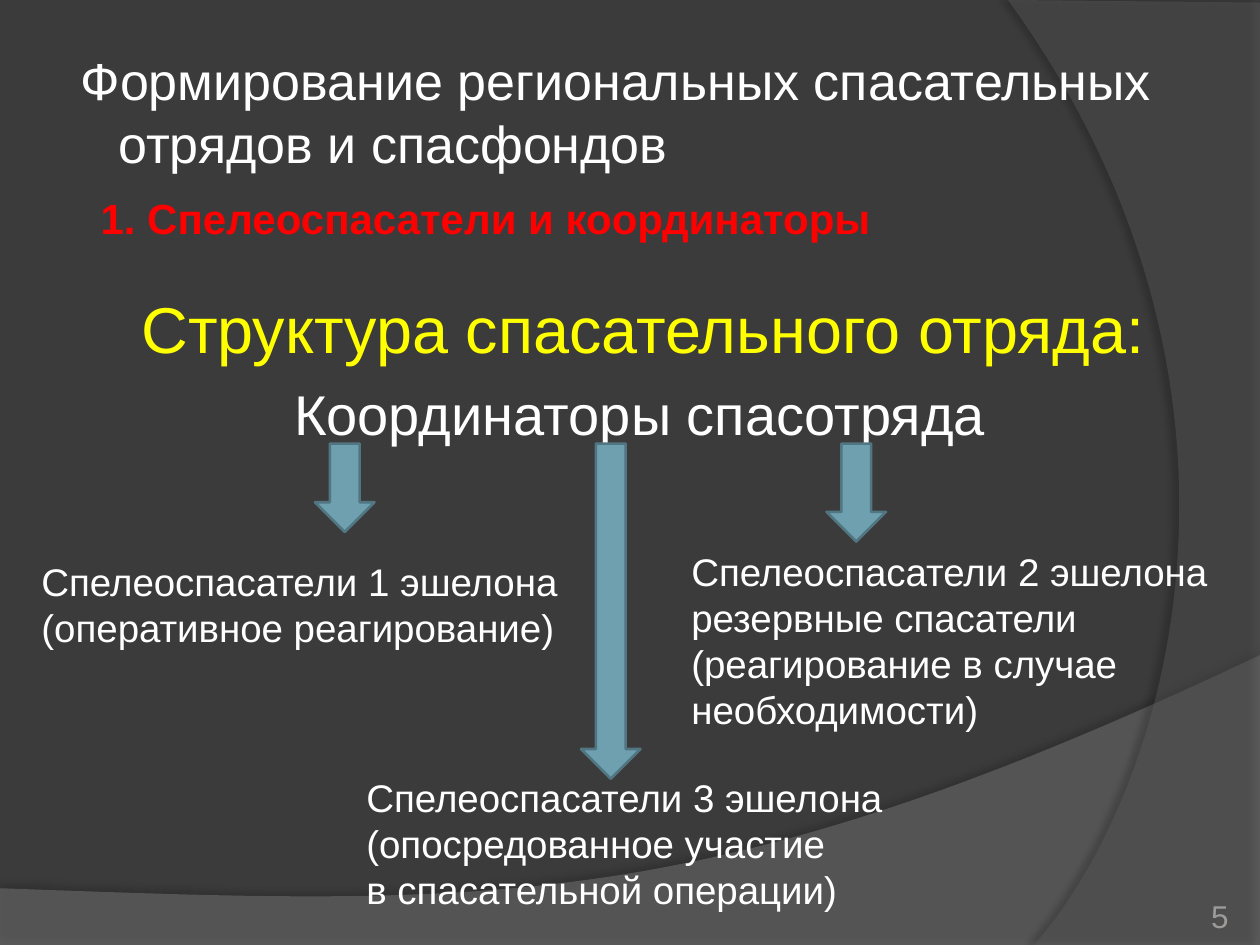
from lxml.etree import SubElement
from pptx import Presentation
from pptx.dml.color import RGBColor
from pptx.enum.shapes import MSO_SHAPE as Preset
from pptx.enum.text import MSO_ANCHOR as Anchor, PP_ALIGN as Align
from pptx.oxml.ns import qn
from pptx.util import Pt

WHITE = "FFFFFF"
CURVE_STEPS = 60


def color(hex_string):
    return RGBColor.from_string(hex_string)


def add_text(slide, box, lines, size, hex_string=WHITE, bold=False, align=Align.LEFT,
             anchor=Anchor.TOP, margins=(7.2, 3.6, 7.2, 3.6)):
    shape = slide.shapes.add_textbox(*map(Pt, box))
    frame = shape.text_frame
    frame.word_wrap = True
    frame.vertical_anchor = anchor
    (frame.margin_left, frame.margin_top,
     frame.margin_right, frame.margin_bottom) = map(Pt, margins)
    frame.text = "\n".join(lines)
    for paragraph in frame.paragraphs:
        paragraph.alignment = align
        for run in paragraph.runs:
            run.font.name = "Arial"
            run.font.size = Pt(size)
            run.font.bold = bold
            run.font.color.rgb = color(hex_string)
    return frame.paragraphs


def set_indent(paragraph, margin, first_line):
    properties = paragraph._p.get_or_add_pPr()
    properties.set("marL", str(Pt(margin)))
    properties.set("indent", str(Pt(first_line)))


def add_down_arrow(slide, left, height):
    shape = slide.shapes.add_shape(Preset.DOWN_ARROW, Pt(left), Pt(253.5), Pt(34), Pt(height))
    shape.shadow.inherit = False
    shape.fill.solid()
    shape.fill.fore_color.rgb = color("6EA0B0")
    shape.line.color.rgb = color("517682")
    shape.line.width = Pt(1.5)


def curve_points(*controls):
    points = []
    for step in range(CURVE_STEPS + 1):
        t = step / CURVE_STEPS
        weights = ((1 - t) ** 3, 3 * t * (1 - t) ** 2, 3 * t * t * (1 - t), t ** 3)
        points.append(tuple(sum(w * point[axis] for w, point in zip(weights, controls))
                            for axis in (0, 1)))
    return points


def add_alpha(color_element, percent):
    SubElement(color_element, qn("a:alpha"), val=str(percent * 1000))


def add_swoosh(slide, points, hex_string, opacity, shadow_opacity, distance, direction):
    start, *rest = [(Pt(x), Pt(y)) for x, y in points]
    builder = slide.shapes.build_freeform(*start)
    builder.add_line_segments(rest, close=True)
    shape = builder.convert_to_shape()
    shape.shadow.inherit = False
    shape.line.fill.background()
    shape.fill.solid()
    shape.fill.fore_color.rgb = color(hex_string)
    properties = shape._element.spPr
    add_alpha(properties.find(".//" + qn("a:srgbClr")), opacity)
    shadow = SubElement(properties.find(qn("a:effectLst")), qn("a:outerShdw"),
                        blurRad=str(Pt(4)), dist=str(Pt(distance)),
                        dir=str(direction * 60000), algn="ctr", rotWithShape="0")
    add_alpha(SubElement(shadow, qn("a:srgbClr"), val="000000"), shadow_opacity)


def add_background(slide):
    slide.background.fill.solid()
    slide.background.fill.fore_color.rgb = color("3B3B3B")
    bottom = curve_points((720, 374.4), (402.5, 524.9), (281.5, 517.7), (0, 507.6))
    add_swoosh(slide, bottom + [(0, 540), (720, 540)], "7F7F7F", 45, 35, 3.5, 270)
    right = curve_points((591, 540), (673, 445.7), (733, 216), (576, 0))
    add_swoosh(slide, right + [(720, 1.5), (720, 540)], "5E5E5E", 40, 45, 4, 180)


def add_headings(slide):
    title, = add_text(slide, (36, 28, 662, 84),
                      ["Формирование региональных спасательных отрядов и спасфондов"],
                      29.7, margins=(3.6, 0, 3.6, 3.6))
    set_indent(title, 28, -21.6)
    structure, coordinators = add_text(
        slide, (28, 161.5, 672.5, 92),
        ["Структура спасательного отряда:", "Координаторы спасотряда"],
        37, "FFFF00", align=Align.CENTER)
    set_indent(structure, 28, -21.6)
    set_indent(coordinators, 33, -30)
    coordinators.space_before = Pt(7.5)
    font = coordinators.runs[0].font
    font.size = Pt(32)
    font.color.rgb = color(WHITE)


def main():
    presentation = Presentation()
    presentation.slide_width, presentation.slide_height = Pt(720), Pt(540)
    slide = presentation.slides.add_slide(presentation.slide_layouts[6])
    add_background(slide)
    add_headings(slide)
    echelons = [
        ((388, 309.6, 332, 114), ["Спелеоспасатели 2 эшелона", "резервные спасатели",
                                  "(реагирование в случае необходимости)"]),
        ((202.3, 438.5, 366, 87), ["Спелеоспасатели 3 эшелона", "(опосредованное участие",
                                   "в спасательной операции)"]),
        ((16.6, 315.4, 320, 60.5), ["Спелеоспасатели 1 эшелона",
                                    "(оперативное реагирование)"]),
    ]
    for box, lines in echelons:
        add_text(slide, box, lines, 22)
    for left, height in ((180, 50.5), (472.3, 56), (332, 191.5)):
        add_down_arrow(slide, left, height)
    add_text(slide, (50.4, 106.6, 472, 36), ["1. Спелеоспасатели и координаторы"],
             24, "FF0000", bold=True)
    add_text(slide, (642, 505.5, 60, 28.8), ["5"], 18, "9D9B9A", align=Align.RIGHT,
             anchor=Anchor.BOTTOM, margins=(0, 0, 0, 0))
    presentation.save("out.pptx")


if __name__ == "__main__":
    main()
